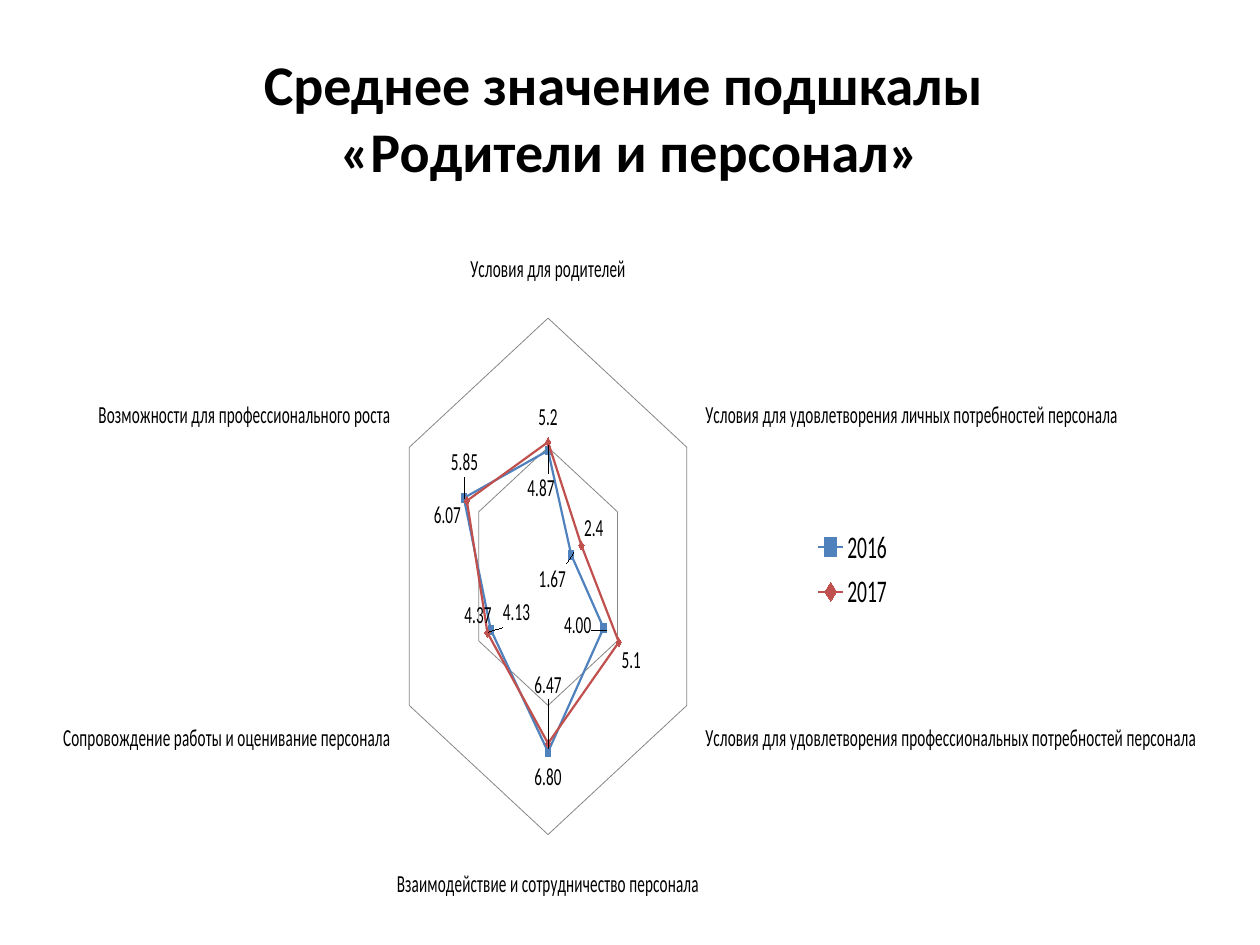
"""Build a slide with a radar chart comparing the subscale means of 2016 and 2017."""
from lxml import etree
from pptx import Presentation
from pptx.chart.data import CategoryChartData
from pptx.dml.color import RGBColor
from pptx.enum.chart import XL_CHART_TYPE, XL_LEGEND_POSITION, XL_MARKER_STYLE, XL_TICK_MARK
from pptx.enum.text import MSO_ANCHOR, PP_ALIGN
from pptx.oxml.ns import qn
from pptx.util import Inches, Pt

RADAR = XL_CHART_TYPE.RADAR_MARKERS
LEGEND_RIGHT = XL_LEGEND_POSITION.RIGHT
SQUARE, DIAMOND = XL_MARKER_STYLE.SQUARE, XL_MARKER_STYLE.DIAMOND
TICK_OUT = XL_TICK_MARK.OUTSIDE
MIDDLE, CENTER = MSO_ANCHOR.MIDDLE, PP_ALIGN.CENTER

COLORS = {"text": "000000", "grid": "868686", "2016": "4F81BD", "2017": "C0504D"}
FONT = "Calibri"
TITLE = "Среднее значение подшкалы \v«Родители и персонал»"
CATEGORIES = [
    "Условия для родителей",
    "Условия для удовлетворения личных потребностей персонала",
    "Условия для удовлетворения профессиональных потребностей персонала",
    "Взаимодействие и сотрудничество персонала",
    "Сопровождение работы и оценивание персонала",
    "Возможности для профессионального роста",
]
YEARS = {
    "2016": {
        "values": [4.87, 1.67, 4, 6.8, 4.13, 6.07],
        "format": "0.00",
        "marker": SQUARE,
        "label_shifts": {0: (-0.01, 0.09), 1: (-0.05, 0.06), 2: (-0.06, -0.03),
                         4: (0.06, -0.05), 5: (0, 0.05)},
    },
    "2017": {
        "values": [5.2, 2.4, 5.1, 6.47, 4.37, 5.85],
        "format": "General",
        "marker": DIAMOND,
        "label_shifts": {3: (0, -0.12), 4: (0.01, -0.05), 5: (0.02, -0.03)},
    },
}
PLOT_LAYOUT = {"layoutTarget": "inner", "xMode": "edge", "yMode": "edge",
               "x": 0.27, "y": 0.14, "w": 0.46, "h": 0.74}


def apply(target, formats):
    """Set every attribute of the target from a dict of format values."""
    for attribute, value in formats.items():
        setattr(target, attribute, value)


def set_layout(parent, position, values):
    """Give a chart part a manual layout as its child at the position."""
    for old in parent.findall(qn("c:layout")):
        parent.remove(old)
    layout = etree.Element(qn("c:layout"))
    manual = etree.SubElement(layout, qn("c:manualLayout"))
    for tag, value in values.items():
        etree.SubElement(manual, qn(f"c:{tag}")).set("val", str(value))
    parent.insert(position, layout)


class SlideBuilder:
    """Hold the style and the current slide."""

    def __init__(self, presentation):
        """Add a title-only slide."""
        self.slide = presentation.slides.add_slide(presentation.slide_layouts[5])

    def color(self, name):
        """Return a colour of the palette."""
        return RGBColor.from_string(COLORS[name])

    def style_font(self, font, size, bold=False):
        """Format a font in the slide's typeface."""
        apply(font, {"name": FONT, "size": Pt(size), "bold": bold})
        font.color.rgb = self.color("text")

    def style_line(self, line, color, width):
        """Format a line."""
        line.color.rgb = self.color(color)
        line.width = Pt(width)

    def title(self, text, left, top, width, height):
        """Place and fill the title."""
        heading = self.slide.shapes.title
        apply(heading, {"left": Inches(left), "top": Inches(top),
                        "width": Inches(width), "height": Inches(height)})
        apply(heading.text_frame, {"text": text, "vertical_anchor": MIDDLE, "word_wrap": True})
        paragraph = heading.text_frame.paragraphs[0]
        paragraph.alignment = CENTER
        for run in paragraph.runs:
            self.style_font(run.font, 32, True)

    def radar(self, left, top, width, height):
        """Add the radar chart of both years."""
        data = CategoryChartData()
        data.categories = CATEGORIES
        for year, details in YEARS.items():
            data.add_series(year, details["values"], details["format"])
        chart = self.slide.shapes.add_chart(
            RADAR, Inches(left), Inches(top), Inches(width), Inches(height), data).chart
        apply(chart, {"has_title": False, "has_legend": True})
        self.style_font(chart.font, 18)
        apply(chart.legend, {"position": LEGEND_RIGHT, "include_in_layout": False})
        chart.plots[0].vary_by_categories = False
        self.axes(chart)
        for series in chart.plots[0].series:
            self.year(series, **YEARS[series.name])
        set_layout(chart.plots[0]._element.getparent(), 0, PLOT_LAYOUT)

    def axes(self, chart):
        """Format the category and value axes."""
        apply(chart.category_axis, {"has_major_gridlines": True, "major_tick_mark": TICK_OUT})
        self.style_font(chart.category_axis.tick_labels.font, 14)
        apply(chart.value_axis, {"visible": False, "has_major_gridlines": True,
                                 "minimum_scale": 0, "maximum_scale": 10, "major_unit": 5})
        apply(chart.value_axis.tick_labels, {"number_format": "0.00",
                                             "number_format_is_linked": False})
        for axis in (chart.category_axis, chart.value_axis):
            self.style_line(axis.major_gridlines.format.line, "grid", 0.75)

    def year(self, series, values, format, marker, label_shifts):
        """Format the line, markers and labels of one year."""
        series.smooth = False
        self.style_line(series.format.line, series.name, 2)
        apply(series.marker, {"style": marker, "size": 5})
        series.marker.format.fill.solid()
        series.marker.format.fill.fore_color.rgb = self.color(series.name)
        self.style_line(series.marker.format.line, series.name, 0.75)
        labels = series.data_labels
        apply(labels, {"show_value": True, "number_format": format,
                       "number_format_is_linked": False})
        self.style_font(labels.font, 14)
        for index, (x, y) in label_shifts.items():
            self.style_font(series.points[index].data_label.font, 14)
            label = series._element.xpath(f"c:dLbls/c:dLbl[c:idx/@val={index}]")[0]
            set_layout(label, 1, {"x": x, "y": y})


def main():
    """Build and save the presentation."""
    presentation = Presentation()
    apply(presentation, {"slide_width": Inches(10), "slide_height": Inches(7.5)})
    builder = SlideBuilder(presentation)
    builder.title(TITLE, 0.5, 0.3, 9, 1.25)
    builder.radar(0.5, 1.75, 9, 5.54)
    presentation.save("out.pptx")


if __name__ == "__main__":
    main()
